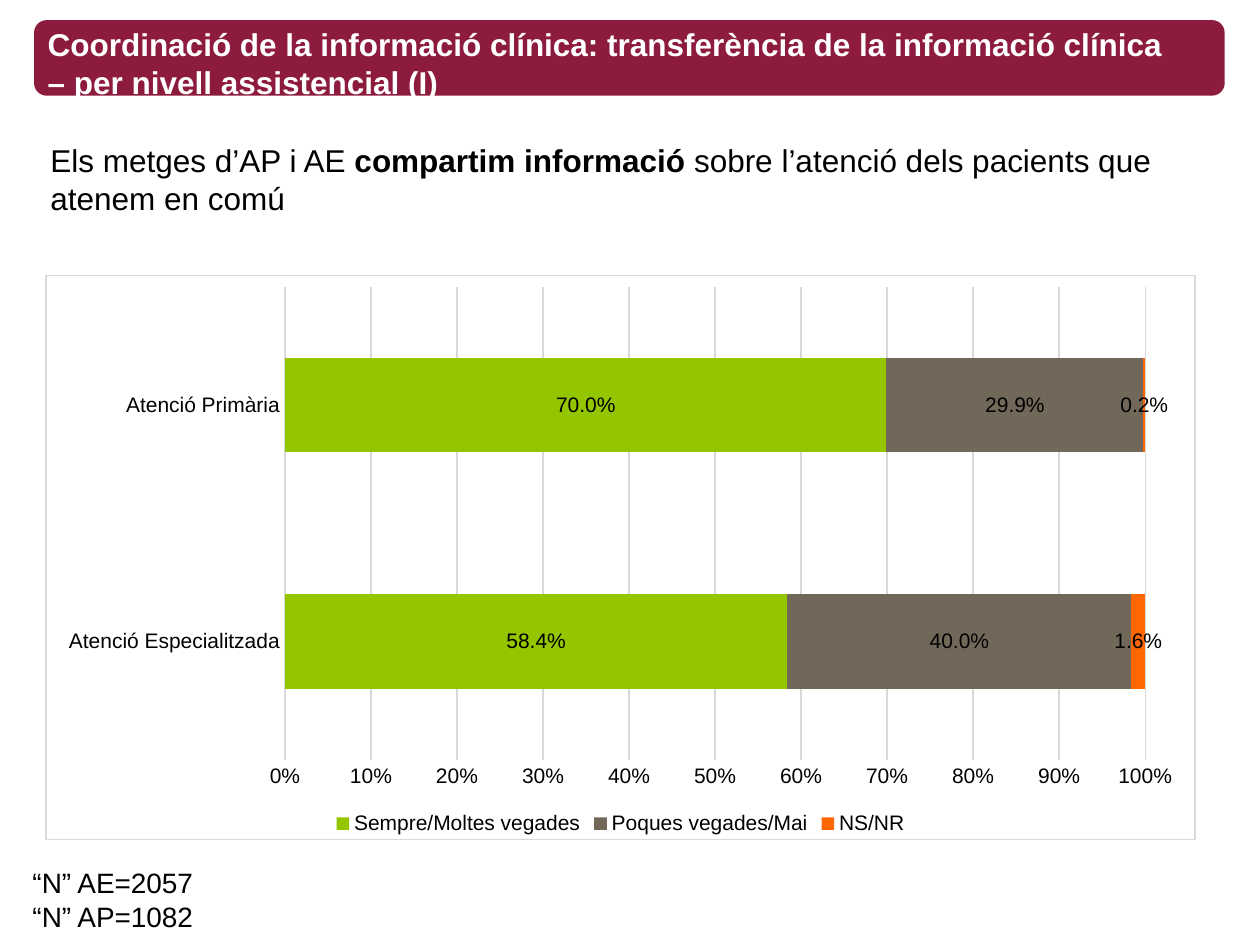
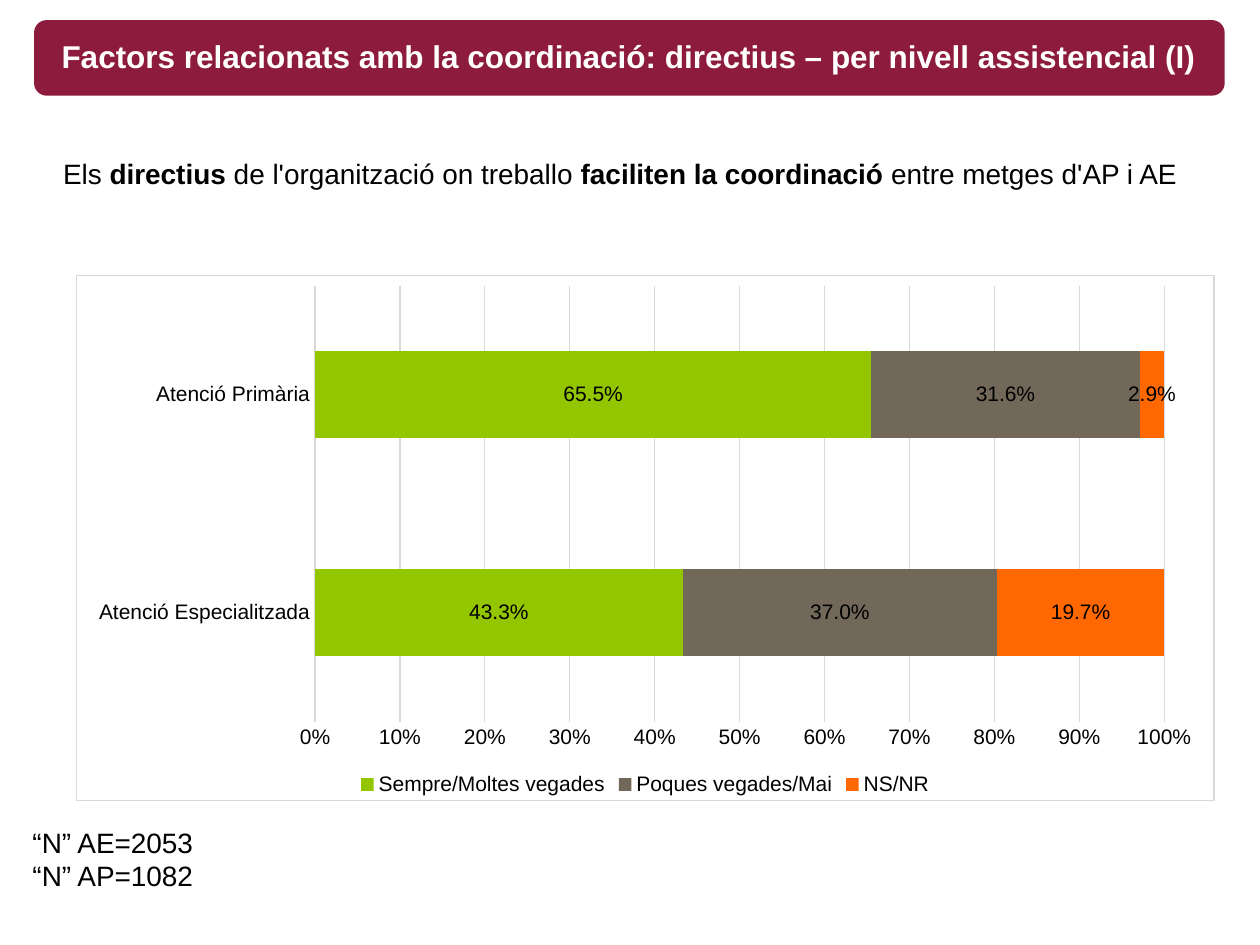
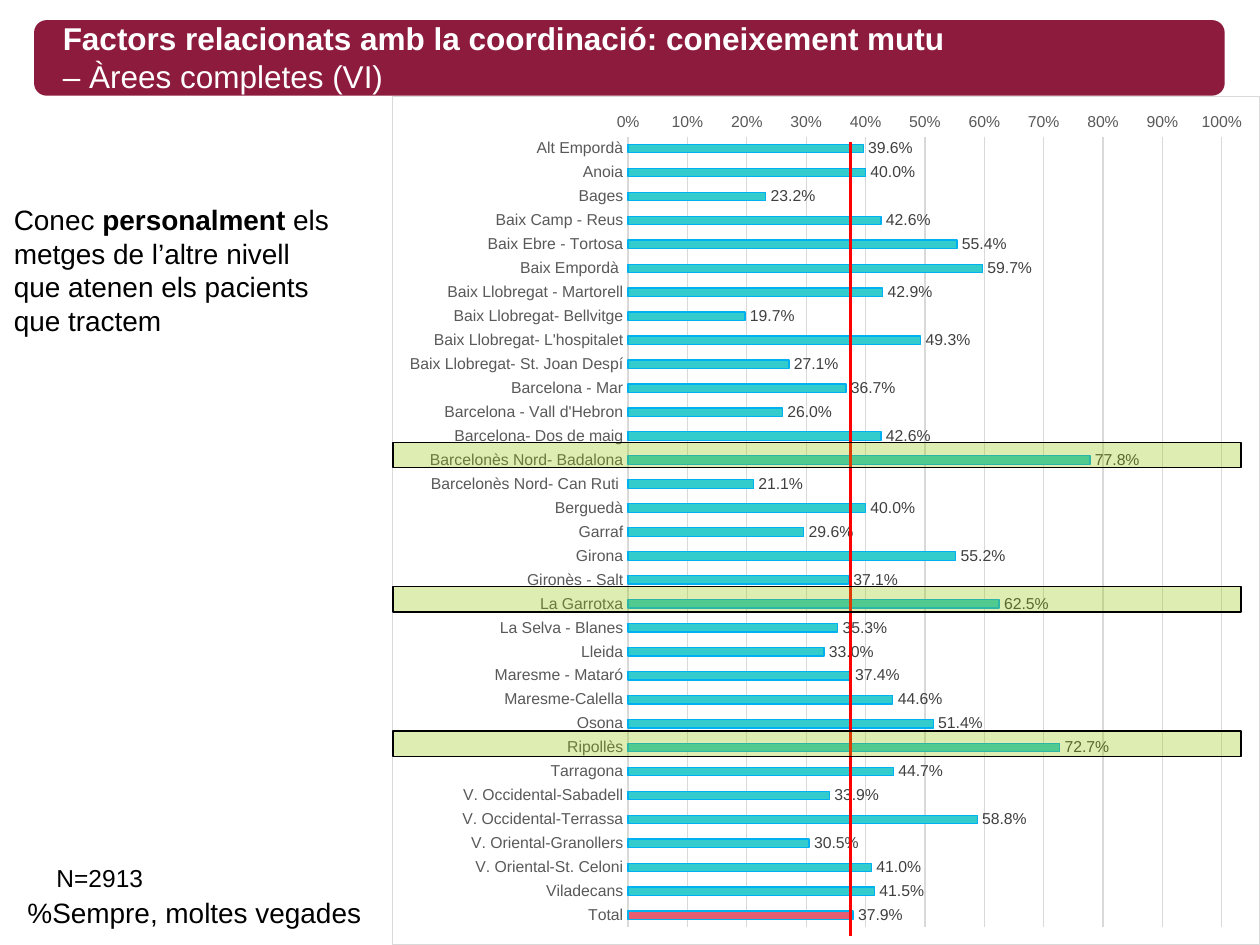
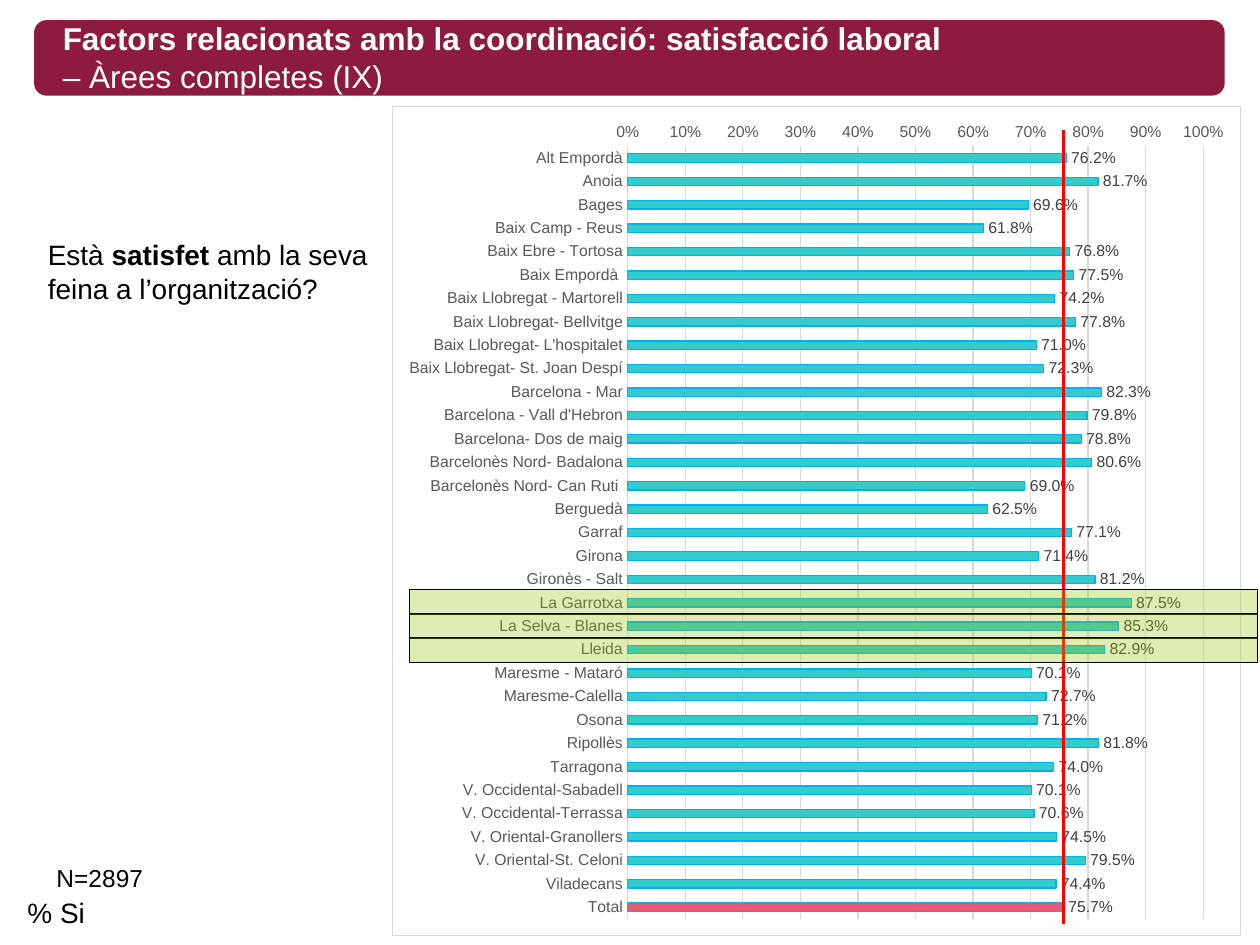
from dataclasses import dataclass
from typing import Any, NamedTuple

from lxml.etree import SubElement
from pptx import Presentation
from pptx.chart.data import CategoryChartData
from pptx.dml.color import RGBColor
from pptx.enum.chart import XL_CHART_TYPE, XL_LABEL_POSITION, XL_LEGEND_POSITION, XL_TICK_MARK
from pptx.enum.shapes import MSO_CONNECTOR, MSO_SHAPE
from pptx.enum.text import MSO_ANCHOR, MSO_AUTO_SIZE, PP_ALIGN
from pptx.oxml import parse_xml
from pptx.oxml.ns import nsdecls, qn
from pptx.util import Inches, Pt

# Page grid: 100 columns by 75 rows
WIDE, HIGH = Inches(10), Inches(7.5)
COLS, ROWS = 100, 75

# Shared style
FACE = "Arial"
WINE, LIME, STONE, FLAME = "8D1B3D", "94C600", "71685A", "FF6700"
TEAL, SKY, ROSE, RED = "33CCCC", "00B0F0", "E55D70", "FF0000"
BLACK, WHITE, MIST, ASH, COAL = "000000", "FFFFFF", "D9D9D9", "595959", "404040"


class Box(NamedTuple):
    left: float
    top: float
    wide: float
    high: float

    def place(self) -> dict[str, int]:
        return {"left": col(self.left), "top": row(self.top),
                "width": col(self.wide), "height": row(self.high)}


@dataclass
class Text:
    """Lines of text; words between asterisks are bold."""
    box: Box
    lines: list[str]
    size: int = 16
    color: str = BLACK
    anchor: MSO_ANCHOR = MSO_ANCHOR.TOP


@dataclass
class Level:
    """Answers by care level, as stacked bars."""
    box: Box
    rates: list[tuple[float, float]]


@dataclass
class Area:
    """Rates by area, with a line at the total and marked rows."""
    box: Box
    rates: list[float]
    line: tuple[float, float]
    marks: list[int]
    edge: float
    first: float


@dataclass
class Page:
    head: Text
    ask: Text
    notes: list[Text]
    body: Level | Area


# Basic tools
def col(num: float) -> int:
    return round(WIDE * num / COLS)


def row(num: float) -> int:
    return round(HIGH * num / ROWS)


def rgb(code: str) -> RGBColor:
    return RGBColor.from_string(code)


def apply(item: Any, **vals: Any) -> None:
    for key, val in vals.items():
        setattr(item, key, val)


def ink(font: Any, size: float, color: str, **vals: Any) -> None:
    apply(font, name=FACE, size=Pt(size), **vals)
    font.color.rgb = rgb(color)


def paint(fill: Any, color: str) -> None:
    fill.solid()
    fill.fore_color.rgb = rgb(color)


def draw(line: Any, color: str, width: float = 0.75) -> None:
    paint(line.fill, color)
    line.width = Pt(width)


# Text
def write(shape: Any, text: Text) -> None:
    apply(shape, **text.box.place())
    frame = shape.text_frame
    apply(frame, word_wrap=True, auto_size=MSO_AUTO_SIZE.NONE, vertical_anchor=text.anchor)
    for num, line in enumerate(text.lines):
        para = frame.add_paragraph() if num else frame.paragraphs[0]
        para.alignment = PP_ALIGN.LEFT
        for odd, words in enumerate(line.split("*")):
            if words:
                run = para.add_run()
                run.text = words
                ink(run.font, text.size, text.color, bold=odd % 2 == 1)


def add_text(slide: Any, text: Text) -> None:
    write(slide.shapes.add_textbox(**text.box.place()), text)


# Shapes
def add_block(slide: Any, kind: MSO_SHAPE, box: Box, color: str) -> Any:
    shape = slide.shapes.add_shape(kind, **box.place())
    shape.shadow.inherit = False
    paint(shape.fill, color)
    return shape


def add_band(slide: Any, layout: Any) -> None:
    """Put the title band on the layout, behind its placeholders."""
    band = add_block(slide, MSO_SHAPE.ROUNDED_RECTANGLE, Box(2.7, 1.6, 94.5, 6), WINE)
    band.line.fill.background()
    layout.shapes.element.insert(2, band.element)


def add_mark(slide: Any, box: Box) -> None:
    mark = add_block(slide, MSO_SHAPE.RECTANGLE, box, LIME)
    draw(mark.line, BLACK)
    tint = mark.element.spPr.find(qn("a:solidFill"))[0]
    SubElement(tint, qn("a:alpha"), val="30000")


def add_line(slide: Any, left: float, top: float, high: float) -> None:
    line = slide.shapes.add_connector(
        MSO_CONNECTOR.STRAIGHT, col(left), row(top + high), col(left), row(top))
    draw(line.line, RED, 1.5)
    SubElement(line.element.spPr, qn("a:effectLst"))


# Charts
def add_chart(slide: Any, kind: XL_CHART_TYPE, box: Box, names: list[str],
              sets: dict[str, list[float]], size: int, color: str, gap: int) -> Any:
    data = CategoryChartData(number_format="0.0%")
    data.categories = names
    for name, vals in sets.items():
        data.add_series(name, vals)
    place = box.place()
    chart = slide.shapes.add_chart(
        kind, place["left"], place["top"], place["width"], place["height"], data).chart
    apply(chart, has_title=False, has_legend=False)
    ink(chart.font, size, color)
    frame = parse_xml(
        f'<c:spPr {nsdecls("c", "a")}><a:solidFill><a:srgbClr val="{WHITE}"/></a:solidFill>'
        f'<a:ln w="9525"><a:solidFill><a:srgbClr val="{MIST}"/></a:solidFill></a:ln></c:spPr>')
    chart.element.find(qn("c:chart")).addnext(frame)
    apply(chart.plots[0], gap_width=gap, vary_by_categories=False)

    # Axes
    cats, vals = chart.category_axis, chart.value_axis
    for axis in (cats, vals):
        apply(axis, major_tick_mark=XL_TICK_MARK.NONE, minor_tick_mark=XL_TICK_MARK.NONE)
        ink(axis.tick_labels.font, size, color)
    draw(cats.format.line, MIST)
    vals.format.line.fill.background()
    apply(vals, has_major_gridlines=True, minimum_scale=0, maximum_scale=1, major_unit=0.1)
    draw(vals.major_gridlines.format.line, MIST)
    apply(vals.tick_labels, number_format="0%", number_format_is_linked=False)
    return chart


def label(bars: Any, spot: XL_LABEL_POSITION, size: int, color: str) -> None:
    tags = bars.data_labels
    apply(tags, show_value=True, number_format="0.0%",
          number_format_is_linked=False, position=spot)
    ink(tags.font, size, color)


def add_level(slide: Any, level: Level) -> None:
    sets = dict(zip(REPLIES, zip(*level.rates)))
    chart = add_chart(slide, XL_CHART_TYPE.BAR_STACKED_100, level.box,
                      LEVELS, sets, 12, BLACK, 150)
    chart.plots[0].overlap = 100
    for bars, color in zip(chart.plots[0].series, REPLIES.values()):
        paint(bars.format.fill, color)
        label(bars, XL_LABEL_POSITION.CENTER, 12, BLACK)
    chart.has_legend = True
    apply(chart.legend, position=XL_LEGEND_POSITION.BOTTOM, include_in_layout=False)
    ink(chart.legend.font, 12, BLACK)


def add_area(slide: Any, area: Area) -> None:
    rates = [rate / 100 for rate in area.rates]
    chart = add_chart(slide, XL_CHART_TYPE.BAR_CLUSTERED, area.box,
                      AREAS, {"Series 1": rates}, 9, ASH, 182)
    chart.category_axis.reverse_order = True
    bars = chart.plots[0].series[0]
    paint(bars.format.fill, TEAL)
    draw(bars.format.line, SKY)
    label(bars, XL_LABEL_POSITION.OUTSIDE_END, 9, COAL)
    total = bars.points[len(AREAS) - 1].format
    paint(total.fill, ROSE)
    draw(total.line, SKY)

    # Total line and marked rows
    add_line(slide, *area.line, SPAN)
    for num in area.marks:
        add_mark(slide, Box(area.edge, area.first + num * SPAN / len(AREAS), 67.3, 2))


# Shared content
LEVELS = ["Atenció Especialitzada", "Atenció Primària"]
REPLIES = {"Sempre/Moltes vegades": LIME, "Poques vegades/Mai": STONE, "NS/NR": FLAME}
AREAS = [
    "Alt Empordà", "Anoia", "Bages", "Baix Camp - Reus", "Baix Ebre - Tortosa",
    "Baix Empordà ", "Baix Llobregat - Martorell", "Baix Llobregat- Bellvitge",
    "Baix Llobregat- L'hospitalet", "Baix Llobregat- St. Joan Despí", "Barcelona - Mar",
    "Barcelona - Vall d'Hebron", "Barcelona- Dos de maig", "Barcelonès Nord- Badalona",
    "Barcelonès Nord- Can Ruti ", "Berguedà", "Garraf", "Girona", "Gironès - Salt",
    "La Garrotxa", "La Selva - Blanes", "Lleida", "Maresme - Mataró", "Maresme-Calella",
    "Osona", "Ripollès", "Tarragona", "V. Occidental-Sabadell", "V. Occidental-Terrassa",
    "V. Oriental-Granollers", "V. Oriental-St. Celoni", "Viladecans", "Total",
]
SPAN = 63  # rows covered by the area bars


def head(box: Box, *lines: str) -> Text:
    return Text(box, list(lines), 18, WHITE, MSO_ANCHOR.MIDDLE)


def ask(box: Box, *lines: str, size: int = 16) -> Text:
    return Text(box, list(lines), size, anchor=MSO_ANCHOR.MIDDLE)


def count(top: float, special: int, primary: int) -> list[Text]:
    return [Text(Box(1.6, top, 15, 6.4), [f"“N” AE={special}", f"“N” AP={primary}"])]


def base(total: int, unit: str) -> list[Text]:
    return [Text(Box(3.5, 68, 27, 3.4), [f"N={total}"], 14),
            Text(Box(1.2, 70.6, 36.6, 3.7), [unit])]


HEAD = Box(4, 2.2, 94.5, 4.7)

PAGES = [
    Page(
        head(Box(2.8, 1.2, 92.1, 7.6), "*Coordinació de la informació clínica: transferència "
             "de la informació clínica – per nivell assistencial (I)*"),
        ask(Box(3, 10.4, 92.1, 7.6), "Els metges d’AP i AE *compartim informació* sobre "
            "l’atenció dels pacients que atenem en comú", size=18),
        count(68.2, 2057, 1082),
        Level(Box(3.6, 21.8, 91.3, 44.9), [(0.584, 0.4, 0.016), (0.7, 0.299, 0.002)]),
    ),
    Page(
        head(Box(3.9, 2.1, 94.5, 4.7), "*Factors relacionats amb la coordinació: directius "
             "– per nivell assistencial (I)*"),
        ask(Box(4, 11.4, 94.5, 4.7), "Els *directius* de l'organització on treballo "
            "*faciliten la coordinació* entre metges d'AP i AE"),
        count(65, 2053, 1082),
        Level(Box(6, 21.8, 90.4, 41.8), [(0.433, 0.37, 0.197), (0.655, 0.316, 0.029)]),
    ),
    Page(
        head(HEAD, "*Factors relacionats amb la coordinació: coneixement mutu*",
             "– Àrees completes (VI)"),
        ask(Box(0.1, 15.5, 30, 11.8), "Conec *personalment* els", "metges de l’altre nivell",
            "que atenen els pacients", "que tractem"),
        base(2913, "%Sempre, moltes vegades"),
        Area(Box(31.1, 7.6, 68.9, 67.4),
             [39.6, 40, 23.2, 42.6, 55.4, 59.7, 42.9, 19.7, 49.3, 27.1, 36.7,
              26, 42.6, 77.8, 21.1, 40, 29.6, 55.2, 37.1, 62.5, 35.3, 33,
              37.4, 44.6, 51.4, 72.7, 44.7, 33.9, 58.8, 30.5, 41, 41.5, 37.9],
             (67.5, 11.3), [13, 19, 25], 31.2, 10.3),
    ),
    Page(
        head(HEAD, "*Factors relacionats amb la coordinació: satisfacció laboral*",
             "– Àrees completes (IX)"),
        ask(Box(2.8, 11.8, 29.1, 19.5), "Està *satisfet* amb la seva feina a l’organització?"),
        base(2897, "% Si"),
        Area(Box(31.1, 8.4, 67.4, 65.9),
             [76.2, 81.7, 69.6, 61.8, 76.8, 77.5, 74.2, 77.8, 71, 72.3, 82.3,
              79.8, 78.8, 80.6, 69, 62.5, 77.1, 71.4, 81.2, 87.5, 85.3, 82.9,
              70.1, 72.7, 71.2, 81.8, 74, 70.1, 70.6, 74.5, 79.5, 74.4, 75.7],
             (84.4, 10.3), [19, 20, 21], 32.5, 10.5),
    ),
]


def main() -> None:
    deck = Presentation()
    apply(deck, slide_width=WIDE, slide_height=HIGH)
    layout = deck.slide_layouts[5]
    for num, page in enumerate(PAGES):
        slide = deck.slides.add_slide(layout)
        if num == 0:
            add_band(slide, layout)
        write(slide.shapes.title, page.ask)
        plot = add_level if isinstance(page.body, Level) else add_area
        plot(slide, page.body)
        for text in (page.head, *page.notes):
            add_text(slide, text)
    deck.save("out.pptx")


if __name__ == "__main__":
    main()
